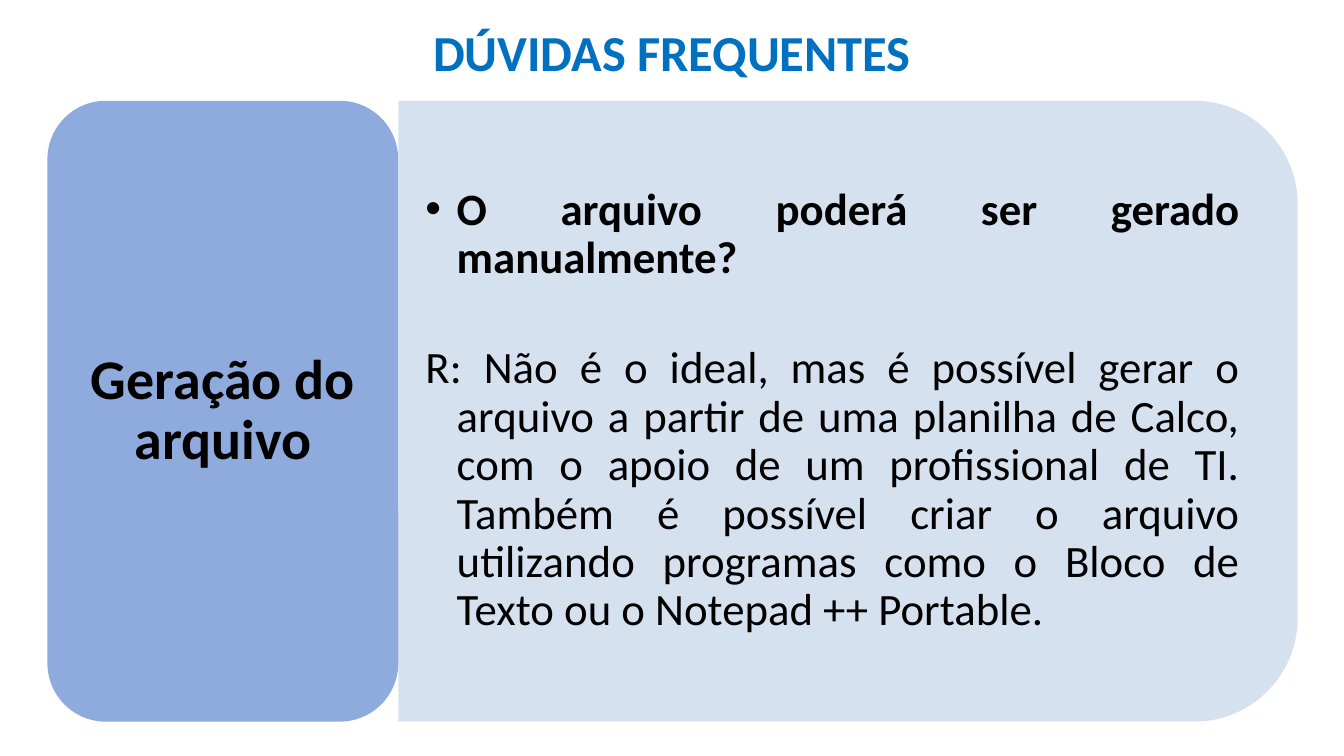
import pptx
import pptx.util
import pptx.dml.color
import pptx.enum.shapes
import pptx.enum.text
import pptx.oxml.ns
import lxml.etree

RGB = pptx.dml.color.RGBColor
Inches, Pt = pptx.util.Inches, pptx.util.Pt
SHAPE = pptx.enum.shapes.MSO_SHAPE
ALIGN = pptx.enum.text.PP_ALIGN
ANCHOR = pptx.enum.text.MSO_ANCHOR
qn = pptx.oxml.ns.qn

# Content
TITLE = "DÚVIDAS FREQUENTES"
TOPIC = "Geração do arquivo"
ASK = "O arquivo poderá ser gerado manualmente?"
REPLY = ("R: Não é o ideal, mas é possível gerar o arquivo a partir de uma "
         "planilha de Calco, com o apoio de um profissional de TI. Também é "
         "possível criar o arquivo utilizando programas como o Bloco de "
         "Texto ou o Notepad ++ Portable.")

# Colours
BLACK = RGB(0, 0, 0)
BLUE = RGB(0x00, 0x70, 0xC0)
PALE = RGB(0xD2, 0xDE, 0xEF)
MID = RGB(0x8F, 0xAA, 0xDC)

# Layout in inches: a topic card, then a wide answer panel
WIDE, HIGH = 13.33, 7.5
LEFT, TOP, TALL = 0.47, 1.0, 6.16
CARD, PANEL = 3.48, 8.92
SPLIT = LEFT + CARD
INSET = 0.17
HANG = 0.31

deck = pptx.Presentation()
deck.slide_width, deck.slide_height = Inches(WIDE), Inches(HIGH)
slide = deck.slides.add_slide(deck.slide_layouts[6])


def add_block(kind, box, fill):
    block = slide.shapes.add_shape(kind, *map(Inches, box))
    block.shadow.inherit = False
    block.fill.solid()
    block.fill.fore_color.rgb = fill
    block.line.fill.background()
    return block


def add_text(box, lines, align, size, color, pads=(0.1, 0.05), space=None):
    """Each line is (text, bold, points after)."""
    frame = slide.shapes.add_textbox(*map(Inches, box)).text_frame
    frame.word_wrap = True
    frame.vertical_anchor = ANCHOR.MIDDLE
    frame.margin_left = frame.margin_right = Inches(pads[0])
    frame.margin_top = frame.margin_bottom = Inches(pads[1])
    for i, (text, bold, after) in enumerate(lines):
        para = frame.add_paragraph() if i else frame.paragraphs[0]
        para.text = text
        para.alignment = align
        para.line_spacing = space
        para.space_after = Pt(after)
        font = para.runs[0].font
        font.name, font.size, font.bold = "Calibri", Pt(size), bold
        font.color.rgb = color
    return frame


# Title
add_text((0.72, 0.15, 11.89, 0.71), [(TITLE, True, 0)], ALIGN.CENTER, 36, BLUE)

# Answer panel, turned so that its round corners face right
shift = (PANEL - TALL) / 2
panel = add_block(SHAPE.ROUND_2_SAME_RECTANGLE,
                  (SPLIT + shift, TOP - shift, TALL, PANEL), PALE)
panel.rotation = 90
tint = panel.fill._xPr.find(qn("a:solidFill"))[0]
lxml.etree.SubElement(tint, qn("a:alpha")).set("val", "90000")

answer = add_text((SPLIT, TOP + 0.3, PANEL - 0.3, TALL - 0.6),
                  [(ASK, True, 44), (REPLY, False, 5)],
                  ALIGN.JUSTIFY, 32, BLACK, (0.27, 0.14), 0.9)
for para in answer.paragraphs:
    props = para._p.get_or_add_pPr()
    props.set("marL", str(Inches(HANG)))
    props.set("indent", str(-Inches(HANG)))
bullet = answer.paragraphs[0]._p.get_or_add_pPr()
lxml.etree.SubElement(bullet, qn("a:buFont")).set("typeface", "Arial")
lxml.etree.SubElement(bullet, qn("a:buChar")).set("char", "•")

# Topic card
add_block(SHAPE.ROUNDED_RECTANGLE, (LEFT, TOP, CARD, TALL), MID)
add_text((LEFT + INSET, TOP + INSET, CARD - 2 * INSET, TALL - 2 * INSET),
         [(TOPIC, True, 14)], ALIGN.CENTER, 40, BLACK, (0.17, 0.08), 0.9)

deck.save("out.pptx")
